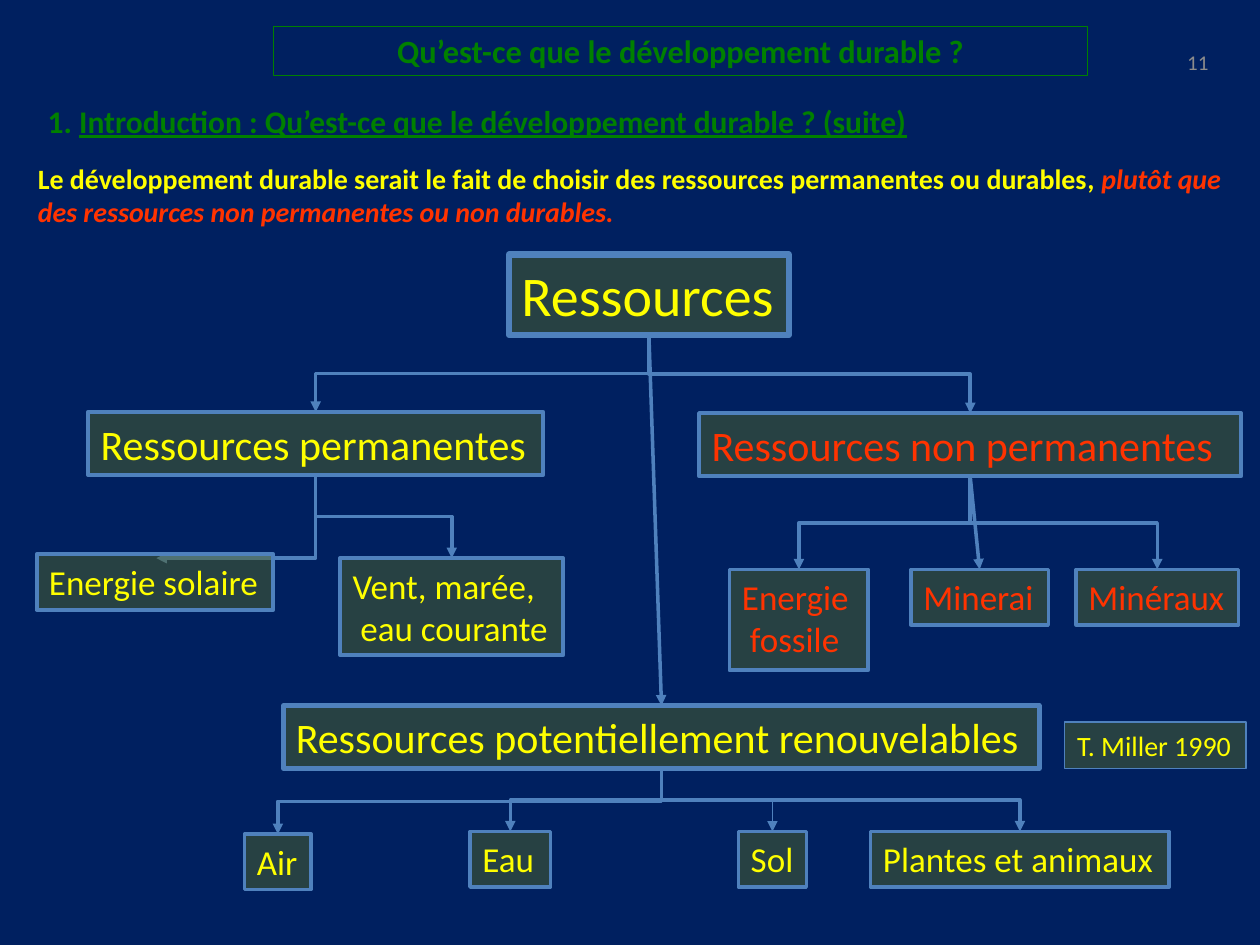
from lxml import etree
from pptx import Presentation
from pptx.dml.color import RGBColor
from pptx.enum.shapes import MSO_CONNECTOR, MSO_SHAPE
from pptx.enum.text import MSO_ANCHOR, MSO_AUTO_SIZE, PP_ALIGN
from pptx.oxml.ns import qn
from pptx.util import Inches, Pt

NAVY = RGBColor(0x00, 0x20, 0x60)
GREEN = RGBColor(0x00, 0x80, 0x00)
OLIVE = RGBColor(0x4F, 0x62, 0x28)
BLUE = RGBColor(0x4F, 0x81, 0xBD)
YELLOW = RGBColor(0xFF, 0xFF, 0x00)
RED = RGBColor(0xFF, 0x33, 0x00)
GREY = RGBColor(0x8C, 0x8C, 0x8C)

RECTANGLE = MSO_SHAPE.RECTANGLE
STRAIGHT, ELBOW = MSO_CONNECTOR.STRAIGHT, MSO_CONNECTOR.ELBOW
LEFT, CENTER, RIGHT, JUSTIFY = PP_ALIGN.LEFT, PP_ALIGN.CENTER, PP_ALIGN.RIGHT, PP_ALIGN.JUSTIFY
TOP, MIDDLE = MSO_ANCHOR.TOP, MSO_ANCHOR.MIDDLE
NO_AUTOFIT = MSO_AUTO_SIZE.NONE
TOP_SITE, BOTTOM_SITE = 0, 2

FONT = "Calibri"
COLUMNS, ROWS = 100, 75
CELL = Inches(0.1)
LEAF_HEIGHT, BRANCH_HEIGHT = 4.4, 5
LEAF_ROW, BASE_ROW = 45.2, 66


def cells(count):
    return round(count * CELL)


def place(shape, left, top, width, height):
    shape.left, shape.top = cells(left), cells(top)
    shape.width, shape.height = cells(width), cells(height)


def write(box, paragraphs, size, color, align=LEFT, anchor=TOP):
    """Fill a box; each paragraph is a list of (text, font settings) pairs."""
    frame = box.text_frame
    frame.word_wrap = True
    frame.auto_size = NO_AUTOFIT
    frame.vertical_anchor = anchor
    for number, spans in enumerate(paragraphs):
        para = frame.add_paragraph() if number else frame.paragraphs[0]
        para.alignment = align
        para.space_before = Pt(0)
        for text, settings in spans:
            span = para.add_run()
            span.text = text
            span.font.name, span.font.size = FONT, Pt(size)
            span.font.color.rgb = settings.get("color", color)
            span.font.bold = settings.get("bold", False)
            span.font.italic = settings.get("italic", False)
            span.font.underline = settings.get("underline", False)


def add_text(page, area, spans, size, color, align, anchor=TOP):
    box = page.shapes.add_textbox(*map(cells, area))
    write(box, [spans], size, color, align, anchor)


def add_title(page):
    title = page.shapes.title
    place(title, 21.7, 2.1, 64.6, 3.9)
    title.line.color.rgb = GREEN
    title.line.width = Pt(0.75)
    write(title, [[("Qu’est-ce que le développement durable ?", {"bold": True})]],
          18.5, GREEN, CENTER, MIDDLE)


def add_definition(page):
    body = page.placeholders[1]
    place(body, 2, 12.3, 96.1, 6.4)
    strong = {"bold": True}
    slanted = {"bold": True, "italic": True}
    write(body, [[
        ("Le développement durable serait le fait de choisir des ressources "
         "permanentes ou durables", strong),
        (", ", slanted),
        ("plutôt que des ressources non permanentes ou non durables.",
         {**slanted, "color": RED}),
    ]], 16, YELLOW)
    properties = body.text_frame.paragraphs[0]._p.get_or_add_pPr()
    properties.set("marL", "0")
    properties.set("indent", "0")
    etree.SubElement(properties, qn("a:buNone"))


def add_node(page, lines, left, top, width, height=LEAF_HEIGHT,
             size=20, border=2, color=YELLOW):
    node = page.shapes.add_shape(RECTANGLE, *map(cells, (left, top, width, height)))
    node.shadow.inherit = False
    node.fill.solid()
    node.fill.fore_color.rgb = OLIVE
    shade = node.fill._xPr.find(qn("a:solidFill"))[0]
    etree.SubElement(shade, qn("a:alpha"), val="50000")
    node.line.color.rgb = BLUE
    node.line.width = Pt(border)
    write(node, [[(line, {})] for line in lines], size, color)
    node.text_frame.margin_right = 0
    return node


def style_arrow(arrow, weight):
    arrow.line.color.rgb = BLUE
    arrow.line.width = Pt(weight)
    etree.SubElement(arrow.line._get_or_add_ln(), qn("a:tailEnd"), type="triangle")
    etree.SubElement(arrow._element.spPr, qn("a:effectLst"))


def bottom_middle(node):
    return node.left + node.width // 2, node.top + node.height


def top_middle(node):
    return node.left + node.width // 2, node.top


def turn_downward(arrow, start, end):
    """Turn an elbow by a quarter so that it leaves its start vertically."""
    across, down = abs(end[0] - start[0]), end[1] - start[1]
    arrow.left = (start[0] + end[0] - down) // 2
    arrow.top = (start[1] + end[1] - across) // 2
    arrow.width, arrow.height = down, across
    rightward = end[0] > start[0]
    frame = arrow._element.spPr.find(qn("a:xfrm"))
    frame.set("rot", str((270 if rightward else 90) * 60000))
    frame.set("flipH", "1" if rightward else "0")


def link(page, parent, child, kind=ELBOW, weight=2):
    start, end = bottom_middle(parent), top_middle(child)
    arrow = page.shapes.add_connector(kind, *start, *end)
    arrow.begin_connect(parent, BOTTOM_SITE)
    arrow.end_connect(child, TOP_SITE)
    if kind == ELBOW:
        turn_downward(arrow, start, end)
    style_arrow(arrow, weight)


def link_corner(page, parent, end):
    """Draw an arrow with a single bend, down and then sideways to a point."""
    start = bottom_middle(parent)
    arrow = page.shapes.add_connector(ELBOW, *start, *end)
    arrow.begin_connect(parent, BOTTOM_SITE)
    turn_downward(arrow, start, end)
    arrow._element.spPr.find(qn("a:prstGeom")).set("prst", "bentConnector2")
    style_arrow(arrow, 2)


def add_tree(page):
    branch = {"height": BRANCH_HEIGHT, "size": 24, "border": 2.5}
    root = add_node(page, ["Ressources"], 40.4, 20.2, 22.2, 6.4, 32, 3.5)
    lasting = add_node(page, ["Ressources permanentes"], 7, 32.7, 36.1, **branch)
    finite = add_node(page, ["Ressources non permanentes"], 55.5, 32.8, 43,
                      color=RED, **branch)
    renewable = add_node(page, ["Ressources potentiellement renouvelables"],
                         22.5, 56, 60, **branch)

    wind = add_node(page, ["Vent, marée,", " eau courante"], 27, 44.3, 17.7, 7.7, border=2.25)
    fossil = add_node(page, ["Energie", " fossile"], 57.9, LEAF_ROW, 11, 8,
                      border=2.25, color=RED)
    ore = add_node(page, ["Minerai"], 72.3, LEAF_ROW, 10.9, color=RED)
    minerals = add_node(page, ["Minéraux"], 85.4, LEAF_ROW, 12.9, color=RED)

    air = add_node(page, ["Air"], 19.4, BASE_ROW + 0.2, 5.3)
    water = add_node(page, ["Eau"], 37.3, BASE_ROW, 6.4)
    soil = add_node(page, ["Sol"], 58.6, BASE_ROW, 5.4)
    life = add_node(page, ["Plantes et animaux"], 69.1, BASE_ROW, 23.7)

    for parent, children in ((root, (lasting, finite)), (lasting, (wind,)),
                             (finite, (fossil, minerals)),
                             (renewable, (air, water, life))):
        for child in children:
            link(page, parent, child)
    link(page, renewable, soil, weight=0.75)
    link(page, root, renewable, STRAIGHT)
    link(page, finite, ore, STRAIGHT)
    link_corner(page, lasting, (cells(12.4), cells(44.3)))
    add_node(page, ["Energie solaire"], 2.9, 44, 18.8, border=2.25)


def main():
    deck = Presentation()
    deck.slide_width, deck.slide_height = cells(COLUMNS), cells(ROWS)
    page = deck.slides.add_slide(deck.slide_layouts[1])
    page.background.fill.solid()
    page.background.fill.fore_color.rgb = NAVY

    add_title(page)
    add_definition(page)
    add_text(page, (73.6, 2.9, 23.3, 4), [("11", {})], 12, GREY, RIGHT, MIDDLE)
    add_text(page, (2.8, 7.6, 82.7, 4), [
        ("1. ", {"bold": True}),
        ("Introduction : Qu’est-ce que le développement durable ? (suite)",
         {"bold": True, "underline": True}),
    ], 18, GREEN, JUSTIFY)
    add_tree(page)
    add_node(page, ["T. Miller 1990"], 84.5, 57.3, 14.4, 3.7, 16, 0.75)
    deck.save("out.pptx")


if __name__ == "__main__":
    main()
